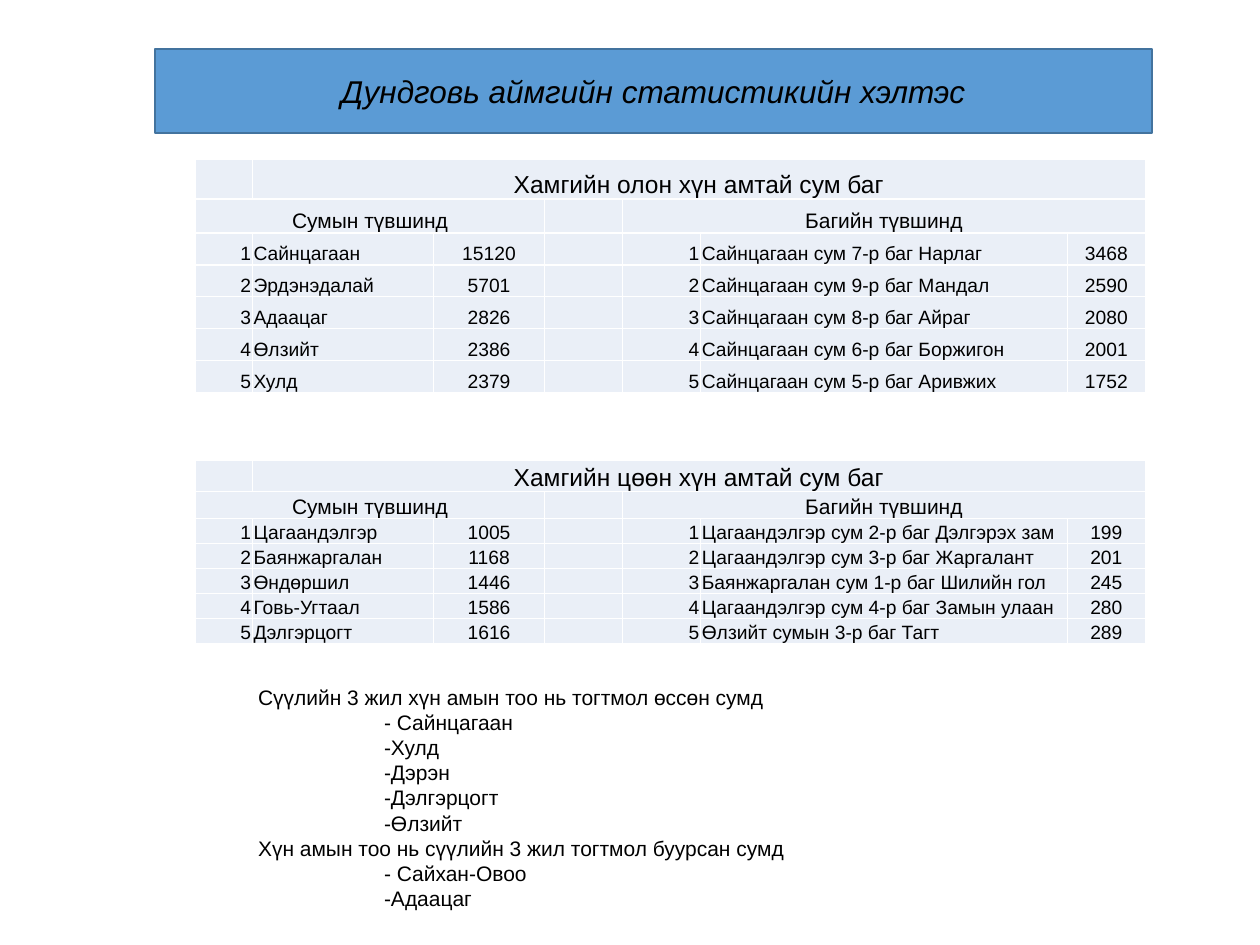
from lxml import etree
from pptx import Presentation
from pptx import util as u
from pptx.dml.color import RGBColor
from pptx.enum import text
from pptx.oxml import ns

BLACK = RGBColor(0, 0, 0)
WHITE = RGBColor(255, 255, 255)
BLUE = RGBColor(0x5B, 0x9B, 0xD5)
DARK_BLUE = RGBColor(0x43, 0x73, 0x9E)
PALE_BLUE = RGBColor(0xEA, 0xEF, 0xF7)

FONT_NAME = "Arial"
LEFT, CENTER, RIGHT = text.PP_ALIGN.LEFT, text.PP_ALIGN.CENTER, text.PP_ALIGN.RIGHT
COLUMN_WIDTHS = [32.4, 103.6, 63.4, 44.6, 44.6, 209.6, 44.6]
COLUMN_ALIGNMENTS = [RIGHT, LEFT, CENTER, CENTER, RIGHT, LEFT, CENTER]

MOST_POPULATED = [
    ("Сайнцагаан", 15120, "Сайнцагаан сум 7-р баг Нарлаг", 3468),
    ("Эрдэнэдалай", 5701, "Сайнцагаан сум 9-р баг Мандал", 2590),
    ("Адаацаг", 2826, "Сайнцагаан сум 8-р баг Айраг", 2080),
    ("Өлзийт", 2386, "Сайнцагаан сум 6-р баг Боржигон", 2001),
    ("Хулд", 2379, "Сайнцагаан сум 5-р баг Аривжих", 1752),
]
LEAST_POPULATED = [
    ("Цагаандэлгэр", 1005, "Цагаандэлгэр сум 2-р баг Дэлгэрэх зам", 199),
    ("Баянжаргалан", 1168, "Цагаандэлгэр сум 3-р баг Жаргалант", 201),
    ("Өндөршил", 1446, "Баянжаргалан сум 1-р баг Шилийн гол", 245),
    ("Говь-Угтаал", 1586, "Цагаандэлгэр сум 4-р баг Замын улаан", 280),
    ("Дэлгэрцогт", 1616, "Өлзийт сумын 3-р баг Тагт", 289),
]
TRENDS = [
    ("Сүүлийн 3 жил хүн амын тоо нь тогтмол өссөн сумд",
     ["- Сайнцагаан", "-Хулд", "-Дэрэн", "-Дэлгэрцогт", "-Өлзийт"]),
    ("Хүн амын тоо нь сүүлийн 3 жил тогтмол буурсан сумд",
     ["- Сайхан-Овоо", "-Адаацаг"]),
]


def set_attributes(target, values):
    for name, value in values.items():
        setattr(target, name, value)


def write(paragraph, content, size, alignment, italic=False):
    paragraph.alignment = alignment
    run = paragraph.add_run()
    run.text = content
    set_attributes(run.font, {"name": FONT_NAME, "size": u.Pt(size), "italic": italic})
    run.font.color.rgb = BLACK


def add_title(slide, content):
    title = slide.shapes.title
    set_attributes(title, {"left": u.Pt(88.6), "top": u.Pt(28),
                           "width": u.Pt(569.5), "height": u.Pt(48.2)})
    title.fill.solid()
    title.fill.fore_color.rgb = BLUE
    title.line.color.rgb = DARK_BLUE
    title.line.width = u.Pt(1)
    set_attributes(title.text_frame, {"word_wrap": True,
                                      "auto_size": text.MSO_AUTO_SIZE.NONE,
                                      "vertical_anchor": text.MSO_ANCHOR.MIDDLE})
    write(title.text_frame.paragraphs[0], content, 18, CENTER, italic=True)


def add_borders(cell):
    properties = cell._tc.get_or_add_tcPr()
    for side in ("lnL", "lnR", "lnT", "lnB"):
        line = etree.SubElement(properties, ns.qn(f"a:{side}"), w=str(u.Pt(1)))
        fill = etree.SubElement(line, ns.qn("a:solidFill"))
        etree.SubElement(fill, ns.qn("a:srgbClr"), val=str(WHITE))


def format_cell(cell, content, size, alignment):
    add_borders(cell)
    cell.fill.solid()
    cell.fill.fore_color.rgb = PALE_BLUE
    set_attributes(cell, {"margin_left": u.Pt(0.7), "margin_right": u.Pt(0.7),
                          "margin_top": u.Pt(0.7), "margin_bottom": 0,
                          "vertical_anchor": text.MSO_ANCHOR.BOTTOM})
    paragraph = cell.text_frame.paragraphs[0]
    if content:
        write(paragraph, content, size, alignment)
    else:
        etree.SubElement(paragraph._p, ns.qn("a:endParaRPr"), sz=str(size * 100))


def add_ranking(slide, top, row_heights, heading, entries):
    rows = [["", heading] + [""] * 5,
            ["Сумын түвшинд", "", "", "", "Багийн түвшинд", "", ""]]
    for rank, (district, population, subdistrict, residents) in enumerate(entries, 1):
        rows.append([str(rank), district, str(population), "",
                     str(rank), subdistrict, str(residents)])
    frame = slide.shapes.add_table(len(rows), len(COLUMN_WIDTHS), u.Pt(111.8), u.Pt(top),
                                   u.Pt(sum(COLUMN_WIDTHS)), u.Pt(sum(row_heights)))
    table = frame.table
    set_attributes(table, {"first_row": False, "horz_banding": False})
    for column, width in zip(table.columns, COLUMN_WIDTHS):
        column.width = u.Pt(width)
    for row, height in zip(table.rows, row_heights):
        row.height = u.Pt(height)
    for row_index, contents in enumerate(rows):
        size = {0: 14, 1: 12}.get(row_index, 11)
        for column_index, content in enumerate(contents):
            alignment = CENTER if row_index < 2 else COLUMN_ALIGNMENTS[column_index]
            format_cell(table.cell(row_index, column_index), content, size, alignment)
    for row_index, first, last in ((0, 1, 6), (1, 0, 2), (1, 4, 6)):
        table.cell(row_index, first).merge(table.cell(row_index, last))


def add_tab_stop(paragraph, position):
    tabs = etree.SubElement(paragraph._p.get_or_add_pPr(), ns.qn("a:tabLst"))
    etree.SubElement(tabs, ns.qn("a:tab"), pos=str(u.Pt(position)), algn="l")


def add_trends(slide):
    box = slide.shapes.add_textbox(u.Pt(140.4), u.Pt(387.4), u.Pt(455.8), u.Pt(138.2))
    frame = box.text_frame
    set_attributes(frame, {"word_wrap": True,
                           "auto_size": text.MSO_AUTO_SIZE.SHAPE_TO_FIT_TEXT})
    lines = [line for heading, districts in TRENDS
             for line in [heading] + ["\t" + district for district in districts]]
    for index, line in enumerate(lines):
        paragraph = frame.add_paragraph() if index else frame.paragraphs[0]
        add_tab_stop(paragraph, 72)
        write(paragraph, line, 12, text.PP_ALIGN.JUSTIFY)


def main():
    presentation = Presentation()
    set_attributes(presentation, {"slide_width": u.Pt(720), "slide_height": u.Pt(540)})
    slide = presentation.slides.add_slide(presentation.slide_layouts[5])
    add_title(slide, "Дундговь аймгийн статистикийн хэлтэс")
    add_ranking(slide, 91, [22.8, 19.4] + [18.2] * 5,
                "Хамгийн олон хүн амтай сум баг", MOST_POPULATED)
    add_ranking(slide, 263, [18, 15] + [14.3] * 5,
                "Хамгийн цөөн хүн амтай сум баг", LEAST_POPULATED)
    add_trends(slide)
    presentation.save("out.pptx")


if __name__ == "__main__":
    main()
